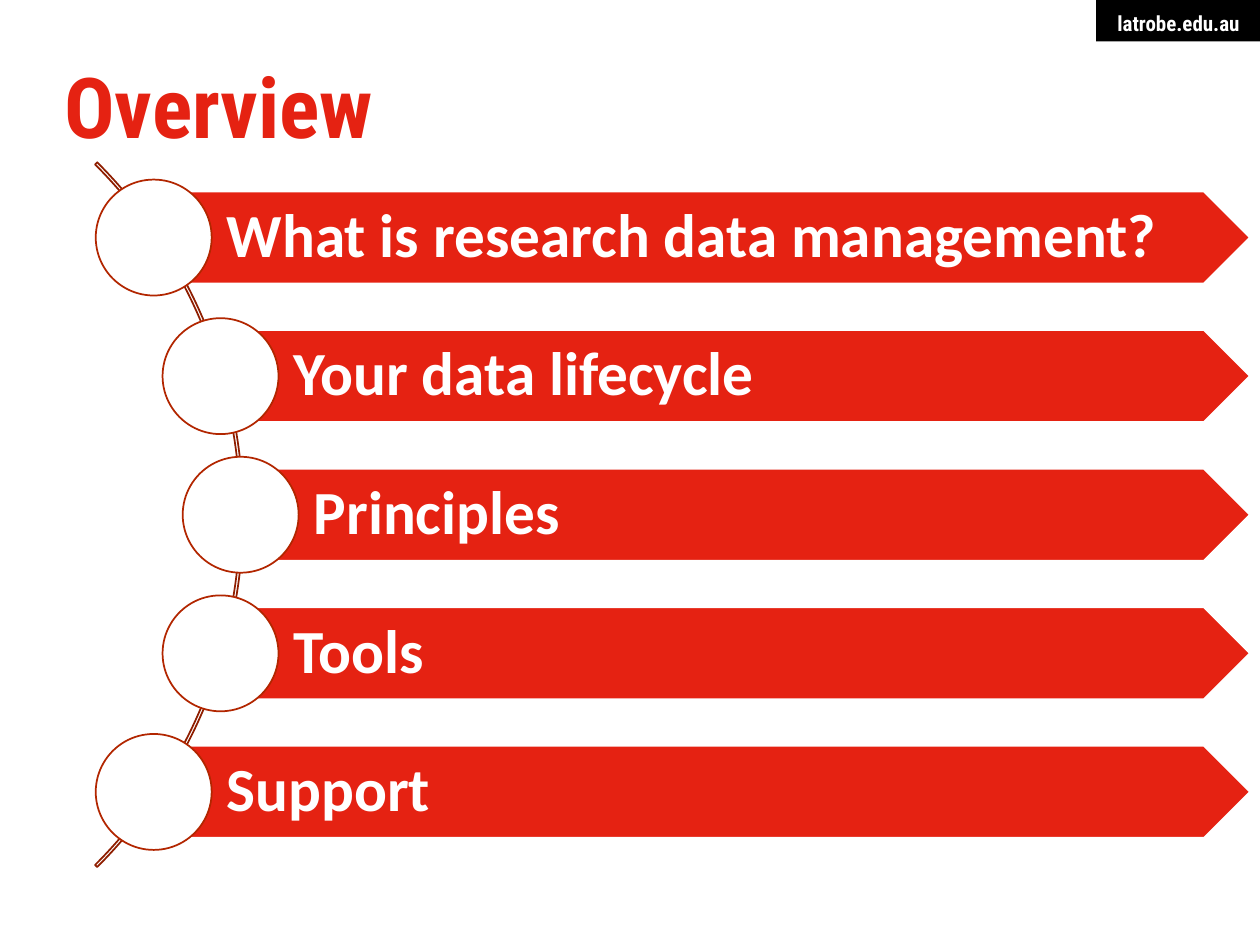
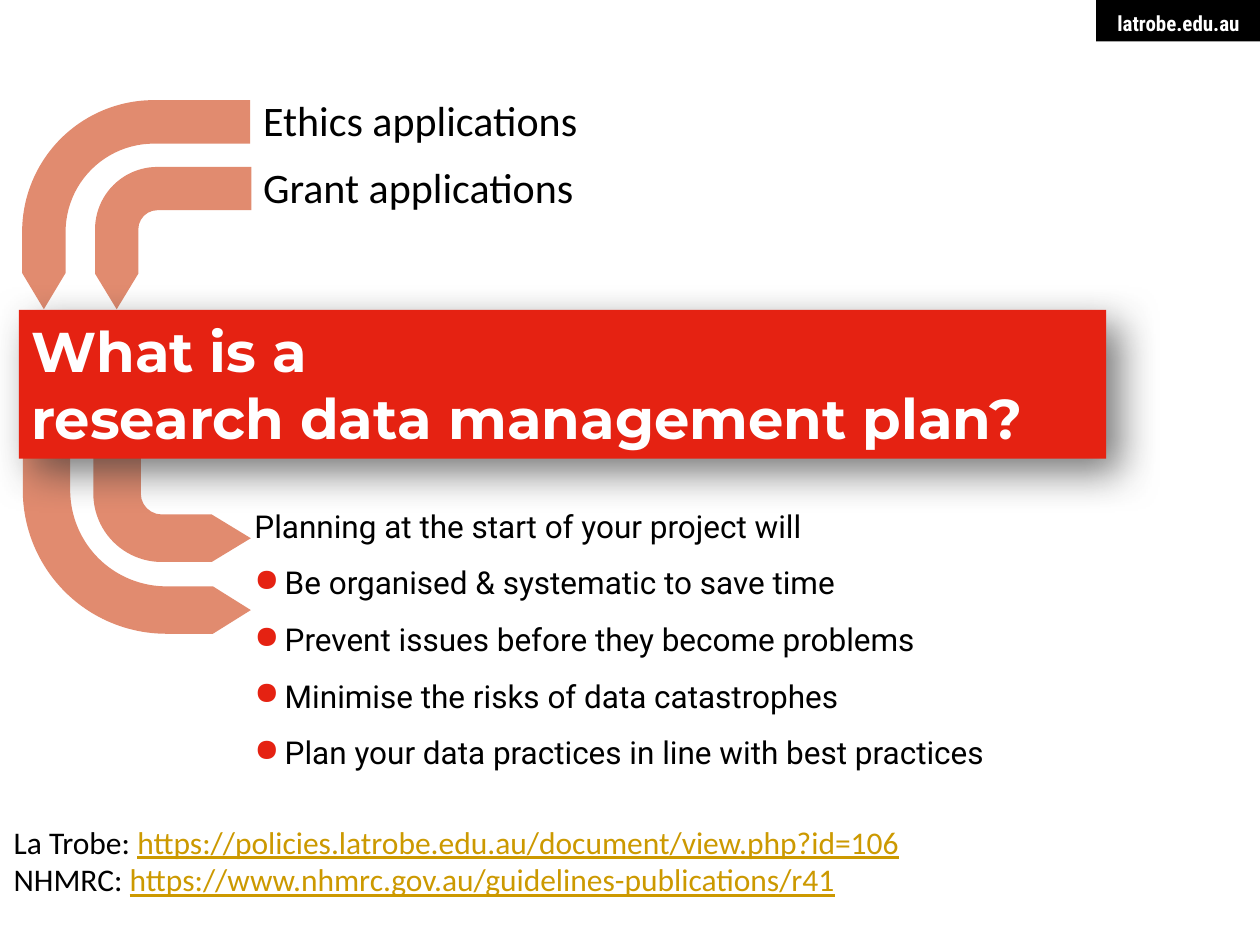
from lxml import etree
from pptx import Presentation
from pptx.dml.color import RGBColor
from pptx.enum.shapes import MSO_SHAPE
from pptx.enum.text import MSO_ANCHOR, PP_ALIGN
from pptx.oxml.ns import qn
from pptx.util import Inches, Pt

RECT = MSO_SHAPE.RECTANGLE
OVAL = MSO_SHAPE.OVAL
PLATE = MSO_SHAPE.PENTAGON
ARC = MSO_SHAPE.BLOCK_ARC
BENT = MSO_SHAPE.BENT_ARROW
TOP, MIDDLE = MSO_ANCHOR.TOP, MSO_ANCHOR.MIDDLE
LEFT, RIGHT = PP_ALIGN.LEFT, PP_ALIGN.RIGHT

RED, WHITE, BLACK = "E52212", "FFFFFF", "000000"
RUST, BROWN, SALMON, GOLD = "B22600", "8F1E00", "E18B6F", "CC9900"
HEAD, BODY, SANS, SHOW = "Roboto Condensed", "Roboto", "Calibri", "Montserrat"
PAD = (0.1, 0.05, 0.1, 0.05)


def color(code):
    return RGBColor.from_string(code)


def add_xml(parent, tag, **attrs):
    return etree.SubElement(parent, qn(tag), {k: str(v) for k, v in attrs.items()})


def add_shape(slide, kind, at, fill=None, line=None, adj=()):
    shape = slide.shapes.add_shape(kind, *map(Inches, at))
    shape.shadow.inherit = False
    for i, value in enumerate(adj):
        shape.adjustments[i] = value
    if fill:
        shape.fill.solid()
        shape.fill.fore_color.rgb = color(fill)
    else:
        shape.fill.background()
    if line:
        shape.line.color.rgb = color(line)
        shape.line.width = Pt(1)
    else:
        shape.line.fill.background()
    return shape


def set_frame(shape, pad=PAD, anchor=TOP, wrap=True):
    frame = shape.text_frame
    frame.word_wrap = wrap
    frame.vertical_anchor = anchor
    sides = map(Inches, pad)
    frame.margin_left, frame.margin_top, frame.margin_right, frame.margin_bottom = sides
    return frame


def add_run(para, text, font, size, ink, bold=False, line=False):
    run = para.add_run()
    run.text = text
    run.font.name = font
    run.font.size = Pt(size)
    run.font.color.rgb = color(ink)
    run.font.bold = bold
    run.font.underline = line


def next_para(frame, first, space=None, align=LEFT):
    para = frame.paragraphs[0] if first else frame.add_paragraph()
    para.alignment = align
    if space:
        para.line_spacing = space
    return para


def add_box(slide, at, pad=PAD, wrap=True):
    return set_frame(slide.shapes.add_textbox(*map(Inches, at)), pad, wrap=wrap)


def add_bullet(para):
    props = para._p.get_or_add_pPr()
    indent = Inches(0.24)
    props.set("marL", str(indent))
    props.set("indent", str(-indent))
    add_xml(add_xml(props, "a:buClr"), "a:srgbClr", val=RED)
    add_xml(props, "a:buChar", char="●")


def add_shadow(shape):
    effects = shape.element.spPr.find(qn("a:effectLst"))
    outer = add_xml(effects, "a:outerShdw", blurRad=Pt(23), dist=Pt(11),
                    dir=45 * 60000, algn="tl", rotWithShape=0)
    shade = add_xml(outer, "a:srgbClr", val="333333")
    add_xml(shade, "a:alpha", val=65000)


def add_bend(slide, at, turn, adj):
    """Add a mirrored, rotated bent arrow."""
    bend = add_shape(slide, BENT, at, SALMON, adj=adj)
    bend.rotation = turn
    bend.element.spPr.find(qn("a:xfrm")).set("flipH", "1")


def add_page(deck):
    """Add a blank slide with the site tag at top right."""
    slide = deck.slides.add_slide(deck.slide_layouts[6])
    tag = add_shape(slide, RECT, (8.7, 0, 1.3, 0.33), BLACK)
    frame = set_frame(tag, (0.16, 0.08, 0.16, 0.05), wrap=False)
    add_run(next_para(frame, True, align=RIGHT), "latrobe.edu.au", HEAD, 12, WHITE, True)
    return slide


def add_topic(slide, text, left, top):
    """Add an arrow bar with a circle centred on its left end."""
    high, disc = 0.73, 0.92
    bar = add_shape(slide, PLATE, (left, top, 9.92 - left, high), RED, WHITE)
    frame = set_frame(bar, (0.58, 0.1, 0.1, 0.1), MIDDLE)
    add_run(next_para(frame, True, 0.9), text, SANS, 35, WHITE, True)
    at = (left - disc / 2, top + (high - disc) / 2, disc, disc)
    add_shape(slide, OVAL, at, WHITE, RUST)


def build_overview(deck):
    slide = add_page(deck)
    frame = add_box(slide, (0.51, 0.47, 8.98, 0.92), (0, 0, 0, 0))
    add_run(next_para(frame, True, Pt(55)), "Overview", HEAD, 48, RED, True)
    add_shape(slide, ARC, (-5.98, 0.13, 7.91, 7.91), line=BROWN, adj=(189, 27, 0.003))
    topics = (
        ("What is research data management?", 1.22),
        ("Your data lifecycle", 1.75),
        ("Principles", 1.91),
        ("Tools", 1.75),
        ("Support", 1.22),
    )
    for i, (text, left) in enumerate(topics):
        add_topic(slide, text, left, 1.52 + 1.1 * i)


def build_plan(deck):
    slide = add_page(deck)
    inner = (0.5, 0.152, 0.25, 0.438)
    add_bend(slide, (0.18, 3.22, 1.81, 1.81), 180, (0.5, 0.104, 0.166, 0.63))
    add_bend(slide, (0.74, 3.22, 1.25, 1.24), 180, inner)

    frame = add_box(slide, (2.02, 3.87, 7.9, 2.61), (0, 0, 0, 0))
    points = (
        "Planning at the start of your project will",
        "Be organised & systematic to save time",
        "Prevent issues before they become problems",
        "Minimise the risks of data catastrophes",
        "Plan your data practices in line with best practices",
    )
    for i, text in enumerate(points):
        para = next_para(frame, i == 0, 1.5)
        if i:
            add_bullet(para)
        add_run(para, text, BODY, 18, BLACK)

    for text, top in (("Ethics applications", 0.7), ("Grant applications", 1.23)):
        frame = add_box(slide, (1.99, top, 2.75, 0.5), wrap=False)
        add_run(next_para(frame, True), text, SANS, 24, BLACK)
    add_bend(slide, (0.25, 0.72, 1.66, 1.81), 270, (0.5, 0.104, 0.173, 0.63))
    add_bend(slide, (0.81, 1.27, 1.13, 1.24), 270, inner)

    banner = add_shape(slide, RECT, (0.15, 2.46, 8.63, 1.18), RED)
    add_shadow(banner)
    frame = set_frame(banner)
    for i, text in enumerate(("What is a", "research data management plan?")):
        add_run(next_para(frame, i == 0), text, SHOW, 32, WHITE, True)

    frame = add_box(slide, (0.01, 6.48, 7.32, 0.71), wrap=False)
    sources = (
        ("La Trobe: ", "https://policies.latrobe.edu.au/document/view.php?id=106"),
        ("NHMRC: ", "https://www.nhmrc.gov.au/guidelines-publications/r41"),
    )
    for i, (label, site) in enumerate(sources):
        para = next_para(frame, i == 0)
        add_run(para, label, SANS, 18, BLACK)
        add_run(para, site, SANS, 18, GOLD, line=True)


def main():
    deck = Presentation()
    deck.slide_width, deck.slide_height = Inches(10), Inches(7.5)
    build_overview(deck)
    build_plan(deck)
    deck.save("out.pptx")


if __name__ == "__main__":
    main()
